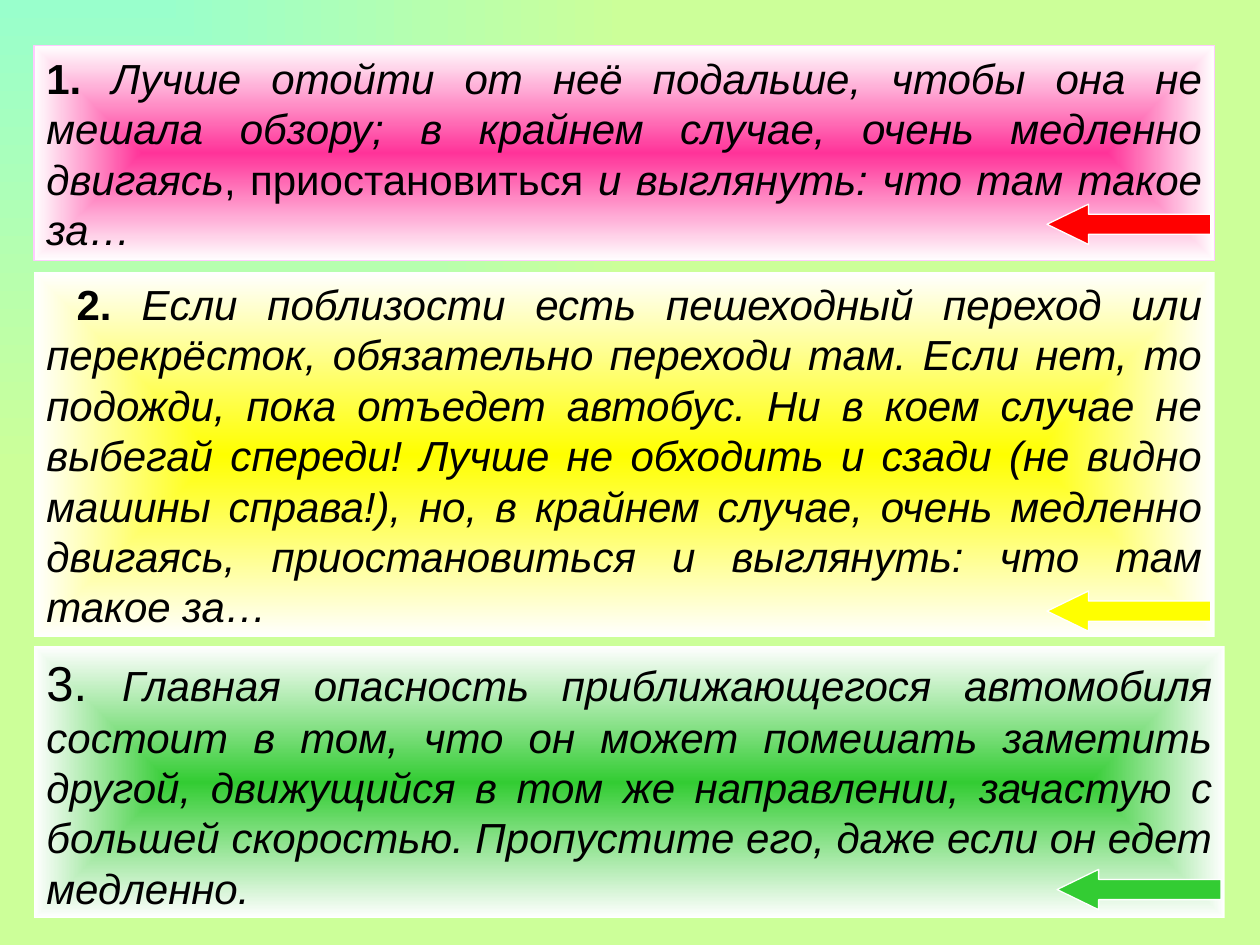
from lxml.etree import SubElement
from pptx import Presentation
from pptx.dml.color import RGBColor
from pptx.enum.shapes import MSO_SHAPE
from pptx.enum.text import MSO_ANCHOR, MSO_AUTO_SIZE, PP_ALIGN
from pptx.oxml.ns import qn
from pptx.util import Inches, Pt

HUES = {
    "mint": "99FFCC", "lime": "CCFF99", "pink": "FF3399", "rose": "FFCCFF",
    "red": "FF0000", "yellow": "FFFF00", "green": "33CC33",
    "white": "FFFFFF", "black": "000000",
}


def shade(fill, root, hues, kind, focus):
    """Fill with a two-colour gradient that spreads out from a focus (l, t, r, b in %)."""
    fill.gradient()
    for stop, hue in zip(fill.gradient_stops, hues):
        stop.color.rgb = RGBColor.from_string(HUES[hue])
    for stop, place in zip(fill.gradient_stops, (0, 1)):
        stop.position = place
    grad = root.find(".//" + qn("a:gradFill"))
    grad.remove(grad.find(qn("a:lin")))
    way = SubElement(grad, qn("a:path"), {"path": kind})
    SubElement(way, qn("a:fillToRect"),
               {side: str(pct * 1000) for side, pct in zip("ltrb", focus)})


def write(para, text, size=24, bold=False, italic=False):
    run = para.add_run()
    run.text = text
    font = run.font
    font.name, font.size, font.bold, font.italic = "Arial", Pt(size), bold, italic
    font.color.rgb = RGBColor.from_string(HUES["black"])


deck = Presentation()
deck.slide_width, deck.slide_height = Inches(10), Inches(7.5)
slide = deck.slides.add_slide(deck.slide_layouts[6])
shade(slide.background.fill, slide.element, ("mint", "lime"), "rect", (0, 0, 100, 100))

# top, width, height, fill, border, arrow colour, arrow top, first-line indent, runs
rules = [
    (0.36, 9.37, 1.71, "pink", "rose", "red", 1.62, 0, [
        ("1. ", {"bold": True}),
        ("Лучше отойти от неё подальше, чтобы она не мешала обзору; в крайнем "
         "случае, очень медленно двигаясь", {"italic": True}),
        (", приостановиться ", {}),
        ("и выглянуть: что там такое за…", {"italic": True}),
    ]),
    (2.16, 9.37, 2.9, "yellow", None, "yellow", 4.69, 0.24, [
        ("2. ", {"bold": True}),
        ("Если поблизости есть пешеходный переход или перекрёсток, обязательно "
         "переходи там. Если нет, то подожди, пока отъедет автобус. Ни в коем "
         "случае не выбегай спереди! Лучше не обходить и сзади (не видно машины "
         "справа!), но, в крайнем случае, очень медленно двигаясь, "
         "приостановиться и выглянуть: что там такое за…", {"italic": True}),
    ]),
    (5.13, 9.45, 2.16, "green", None, "green", 6.9, 0, [
        ("3. ", {"size": 28}),
        ("Главная опасность приближающегося автомобиля состоит в том, что он "
         "может помешать заметить другой, движущийся в том же направлении, "
         "зачастую с большей скоростью. Пропустите его, даже если он едет "
         "медленно.", {"italic": True}),
    ]),
]
left, long, tall, inset = 0.27, 1.3, 0.32, 0.03

for top, wide, high, hue, edge, tint, low, indent, runs in rules:
    box = slide.shapes.add_shape(MSO_SHAPE.RECTANGLE, Inches(left), Inches(top),
                                 Inches(wide), Inches(high))
    box.shadow.inherit = False
    shade(box.fill, box.element, (hue, "white"), "shape", (50, 50, 50, 50))
    if edge:
        box.line.color.rgb = RGBColor.from_string(HUES[edge])
        box.line.width = Pt(0.75)
    else:
        box.line.fill.background()
    frame = box.text_frame
    frame.word_wrap = True
    frame.auto_size = MSO_AUTO_SIZE.SHAPE_TO_FIT_TEXT
    frame.vertical_anchor = MSO_ANCHOR.MIDDLE
    para = frame.paragraphs[0]
    para.alignment = PP_ALIGN.JUSTIFY
    if indent:
        para._p.get_or_add_pPr().set("indent", str(Inches(indent)))
    for text, style in runs:
        write(para, text, **style)

for top, wide, high, hue, edge, tint, low, indent, runs in rules:
    arrow = slide.shapes.add_shape(MSO_SHAPE.LEFT_ARROW,
                                   Inches(left + wide - inset - long), Inches(low),
                                   Inches(long), Inches(tall))
    arrow.shadow.inherit = False
    arrow.adjustments[1] = 1.03
    arrow.fill.solid()
    arrow.fill.fore_color.rgb = RGBColor.from_string(HUES[tint])
    arrow.line.color.rgb = RGBColor.from_string(HUES["white"])
    arrow.line.width = Pt(0.75)

deck.save("out.pptx")
